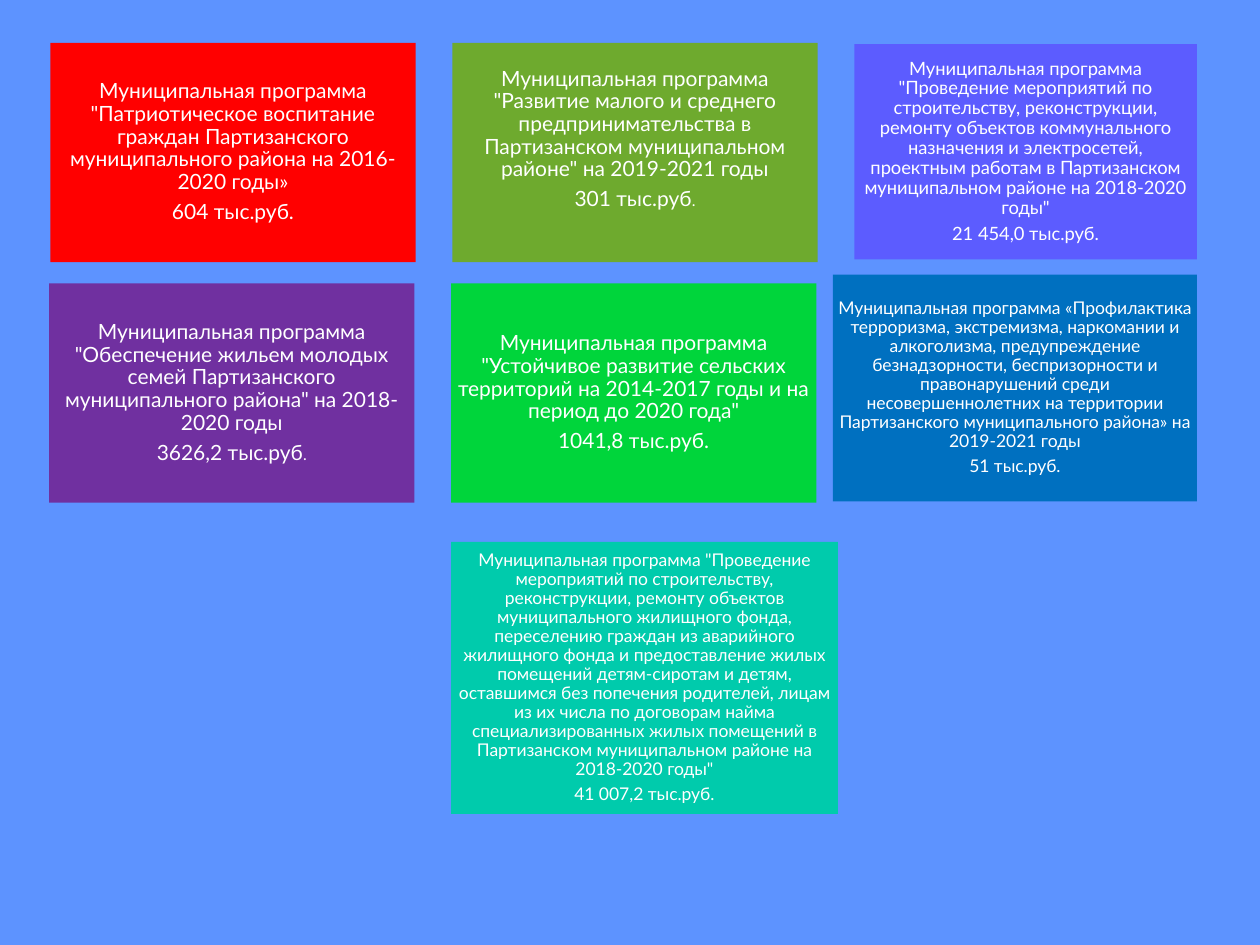
from pptx import Presentation
from pptx.dml.color import RGBColor
from pptx.enum.shapes import MSO_SHAPE
from pptx.enum.text import MSO_ANCHOR, PP_ALIGN
from pptx.util import Inches, Pt

BACKGROUND = RGBColor(0x5D, 0x93, 0xFF)
WHITE = RGBColor(0xFF, 0xFF, 0xFF)
RED = RGBColor(0xFF, 0x00, 0x00)
OLIVE = RGBColor(0x6E, 0xAA, 0x2E)
INDIGO = RGBColor(0x5C, 0x5C, 0xFF)
PURPLE = RGBColor(0x70, 0x30, 0xA0)
GREEN = RGBColor(0x00, 0xD5, 0x3B)
BLUE = RGBColor(0x00, 0x70, 0xC0)
TEAL = RGBColor(0x00, 0xCB, 0xAC)

FONT = "Lato"
SMALL_STOP = 9  # size of the full stop that ends some amounts

# Box, fill, text size, inset, bottom inset, small stop, programme, amount
PROGRAMMES = [
    ((0.4, 0.34, 2.9, 1.74), RED, 12, 0.05, 0.05, False,
     'Муниципальная программа "Патриотическое воспитание граждан Партизанского '
     'муниципального района на 2016-2020 годы»', "604 тыс.руб."),
    ((3.59, 0.34, 2.9, 1.74), OLIVE, 12, 0.05, 0.25, True,
     'Муниципальная программа "Развитие малого и среднего предпринимательства '
     'в Партизанском муниципальном районе" на 2019-2021 годы', "301 тыс.руб."),
    ((6.78, 0.35, 2.72, 1.71), INDIGO, 10.5, 0.05, 0.05, False,
     'Муниципальная программа "Проведение мероприятий по строительству, '
     'реконструкции, ремонту объектов коммунального назначения и электросетей, '
     'проектным работам в Партизанском муниципальном районе на 2018-2020 годы"',
     "21 454,0 тыс.руб."),
    ((0.39, 2.25, 2.9, 1.74), PURPLE, 12, 0.05, 0.05, True,
     'Муниципальная программа "Обеспечение жильем молодых семей Партизанского '
     'муниципального района" на 2018-2020 годы', "3626,2 тыс.руб."),
    ((3.58, 2.25, 2.9, 1.74), GREEN, 12, 0.05, 0.05, False,
     'Муниципальная программа "Устойчивое развитие сельских территорий '
     'на 2014-2017 годы и на период до 2020 года"', "1041,8 тыс.руб."),
    ((3.58, 4.3, 3.07, 2.16), TEAL, 10, 0.04, 0.04, False,
     'Муниципальная программа "Проведение мероприятий по строительству, '
     'реконструкции, ремонту объектов муниципального жилищного фонда, '
     'переселению граждан из аварийного жилищного фонда и предоставление жилых '
     'помещений детям-сиротам и детям, оставшимся без попечения родителей, '
     'лицам из их числа по договорам найма специализированных жилых помещений '
     'в Партизанском муниципальном районе на 2018-2020 годы"',
     "41 007,2 тыс.руб."),
    ((6.61, 2.18, 2.89, 1.8), BLUE, 10, 0.04, 0.04, False,
     'Муниципальная программа «Профилактика терроризма, экстремизма, наркомании '
     'и алкоголизма, предупреждение безнадзорности, беспризорности и '
     'правонарушений среди несовершеннолетних на территории Партизанского '
     'муниципального района» на 2019-2021 годы', "51 тыс.руб."),
]


def format_paragraph(para, size):
    para.alignment = PP_ALIGN.CENTER
    para.line_spacing = 0.9
    para.space_after = Pt(round(size * 0.35, 1))
    para.font.name = FONT
    para.font.size = Pt(size)
    para.font.color.rgb = WHITE


def add_programme(page, box, fill, size, inset, bottom, small_stop, name, amount):
    card = page.shapes.add_shape(MSO_SHAPE.RECTANGLE, *map(Inches, box))
    card.shadow.inherit = False
    card.fill.solid()
    card.fill.fore_color.rgb = fill
    card.line.fill.background()

    frame = card.text_frame
    frame.word_wrap = True
    frame.vertical_anchor = MSO_ANCHOR.MIDDLE
    frame.margin_left = frame.margin_right = frame.margin_top = Inches(inset)
    frame.margin_bottom = Inches(bottom)

    # Programme name, then its amount
    name_para = frame.paragraphs[0]
    name_para.add_run().text = name
    amount_para = frame.add_paragraph()
    if small_stop:
        amount_para.add_run().text = amount[:-1]
        stop = amount_para.add_run()
        stop.text = amount[-1]
        stop.font.size = Pt(SMALL_STOP)
    else:
        amount_para.add_run().text = amount
    for para in frame.paragraphs:
        format_paragraph(para, size)


def main():
    deck = Presentation()
    deck.slide_width, deck.slide_height = Inches(10), Inches(7.5)
    page = deck.slides.add_slide(deck.slide_layouts[6])
    page.background.fill.solid()
    page.background.fill.fore_color.rgb = BACKGROUND
    for programme in PROGRAMMES:
        add_programme(page, *programme)
    deck.save("out.pptx")


if __name__ == "__main__":
    main()
